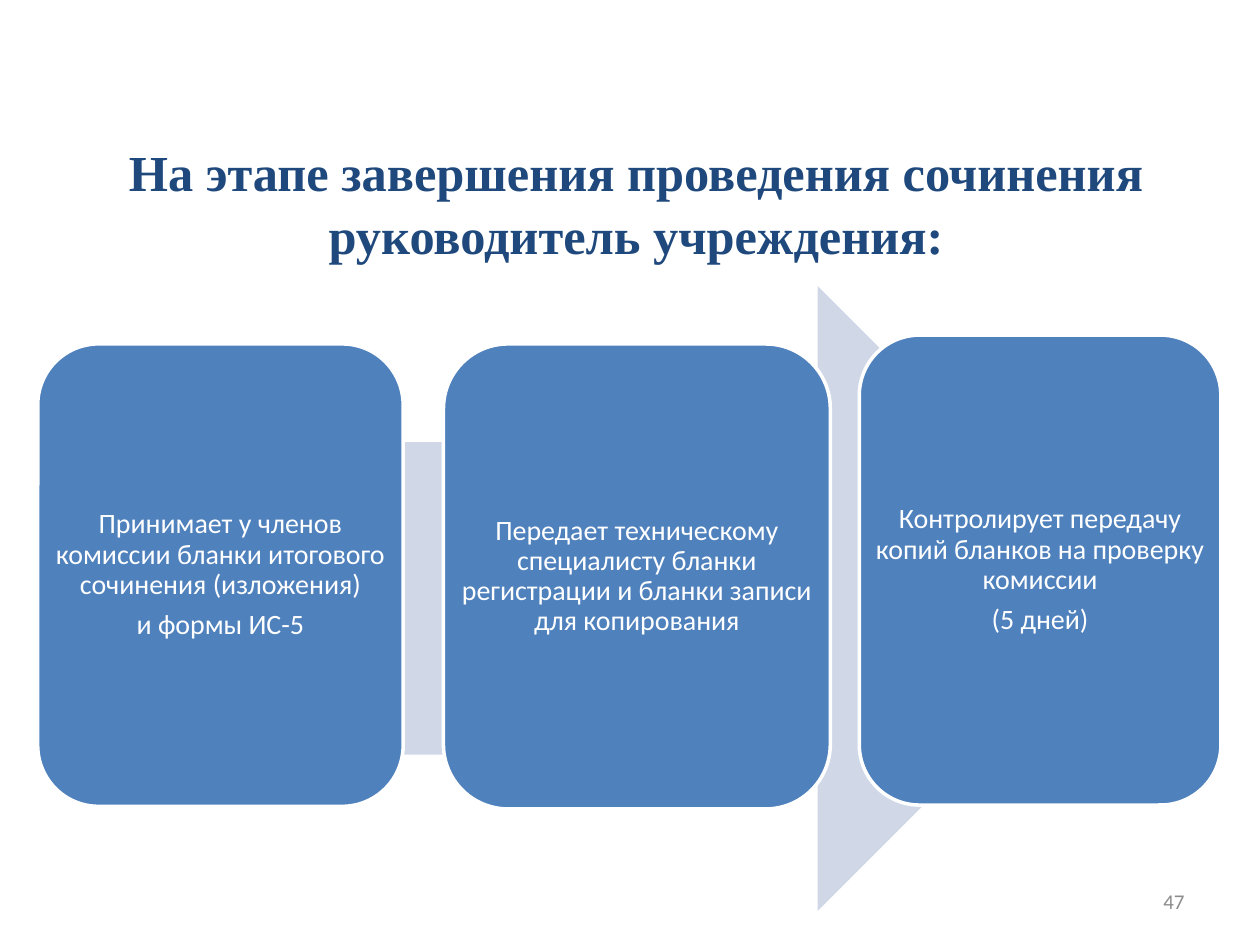
from dataclasses import dataclass

from pptx import Presentation
from pptx.dml.color import RGBColor
from pptx.enum.shapes import MSO_SHAPE
from pptx.enum.text import MSO_ANCHOR, MSO_AUTO_SIZE, PP_ALIGN
from pptx.shapes.autoshape import Shape
from pptx.slide import Slide
from pptx.util import Inches, Pt

ROUNDED_RECTANGLE = MSO_SHAPE.ROUNDED_RECTANGLE
RIGHT_ARROW = MSO_SHAPE.RIGHT_ARROW
MIDDLE = MSO_ANCHOR.MIDDLE
NO_AUTO_SIZE = MSO_AUTO_SIZE.NONE
CENTER = PP_ALIGN.CENTER
RIGHT = PP_ALIGN.RIGHT
TITLE_ONLY_LAYOUT = 5


@dataclass(frozen=True)
class TextStyle:
    font: str
    size: float
    color: str
    bold: bool = False
    line_spacing: float = 1.0
    space_after: float = 0
    alignment: PP_ALIGN = CENTER


@dataclass(frozen=True)
class Theme:
    title: TextStyle = TextStyle("Times New Roman", 28.8, "1F497D", True, 1.05)
    card: TextStyle = TextStyle("Calibri", 16, "FFFFFF", False, 0.9, 5.6)
    number: TextStyle = TextStyle("Calibri", 12, "8C8C8C", alignment=RIGHT)
    arrow_fill: str = "D0D8E8"
    card_fill: str = "4F81BD"
    card_line: str = "FFFFFF"
    card_line_width: float = 2
    card_margin: float = 0.07


@dataclass(frozen=True)
class Box:
    left: float
    top: float
    width: float
    height: float

    def lengths(self) -> tuple[Inches, Inches, Inches, Inches]:
        return (Inches(self.left), Inches(self.top),
                Inches(self.width), Inches(self.height))


@dataclass(frozen=True)
class Card:
    box: Box
    paragraphs: tuple[str, ...]


THEME = Theme()
TITLE_BOX = Box(0.55, 1.09, 9, 1.02)
NUMBER_BOX = Box(7.17, 6.95, 2.33, 0.4)
ARROW_BOX = Box(0.87, 2.27, 8.1, 4.96)
CARDS = (
    Card(Box(0.3, 2.73, 2.9, 3.67),
         ("Принимает у членов комиссии бланки итогового сочинения (изложения)",
          "и формы ИС-5")),
    Card(Box(3.52, 2.73, 3.07, 3.69),
         ("Передает техническому специалисту бланки регистрации "
          "и бланки записи для копирования",)),
    Card(Box(6.82, 2.66, 2.87, 3.73),
         ("Контролирует передачу копий бланков на проверку комиссии",
          "(5 дней)")),
)


def write_text(shape: Shape, paragraphs: tuple[str, ...], style: TextStyle) -> None:
    frame = shape.text_frame
    frame.word_wrap = True
    frame.auto_size = NO_AUTO_SIZE
    frame.vertical_anchor = MIDDLE
    for index, text in enumerate(paragraphs):
        paragraph = frame.add_paragraph() if index else frame.paragraphs[0]
        paragraph.alignment = style.alignment
        paragraph.line_spacing = style.line_spacing
        paragraph.space_after = Pt(style.space_after)
        run = paragraph.add_run()
        run.text = text
        run.font.name = style.font
        run.font.size = Pt(style.size)
        run.font.bold = style.bold
        run.font.color.rgb = RGBColor.from_string(style.color)


def add_text(slide: Slide, box: Box, paragraphs: tuple[str, ...],
             style: TextStyle) -> Shape:
    shape = slide.shapes.add_textbox(*box.lengths())
    write_text(shape, paragraphs, style)
    return shape


def add_filled_shape(slide: Slide, kind: MSO_SHAPE, box: Box, fill: str) -> Shape:
    shape = slide.shapes.add_shape(kind, *box.lengths())
    shape.shadow.inherit = False
    shape.fill.solid()
    shape.fill.fore_color.rgb = RGBColor.from_string(fill)
    shape.line.fill.background()
    return shape


def add_card(slide: Slide, card: Card) -> None:
    shape = add_filled_shape(slide, ROUNDED_RECTANGLE, card.box, THEME.card_fill)
    shape.line.color.rgb = RGBColor.from_string(THEME.card_line)
    shape.line.width = Pt(THEME.card_line_width)
    frame = add_text(slide, card.box, card.paragraphs, THEME.card).text_frame
    margin = Inches(THEME.card_margin)
    frame.margin_left = frame.margin_right = margin
    frame.margin_top = frame.margin_bottom = margin


def main() -> None:
    presentation = Presentation()
    presentation.slide_width = Inches(10)
    presentation.slide_height = Inches(7.5)
    slide = presentation.slides.add_slide(
        presentation.slide_layouts[TITLE_ONLY_LAYOUT])

    title = slide.shapes.title
    title.left, title.top, title.width, title.height = TITLE_BOX.lengths()
    write_text(title, ("На этапе завершения проведения сочинения "
                       "руководитель учреждения:",), THEME.title)
    add_text(slide, NUMBER_BOX, ("47",), THEME.number)

    add_filled_shape(slide, RIGHT_ARROW, ARROW_BOX, THEME.arrow_fill)
    for card in CARDS:
        add_card(slide, card)

    presentation.save("out.pptx")


if __name__ == "__main__":
    main()
